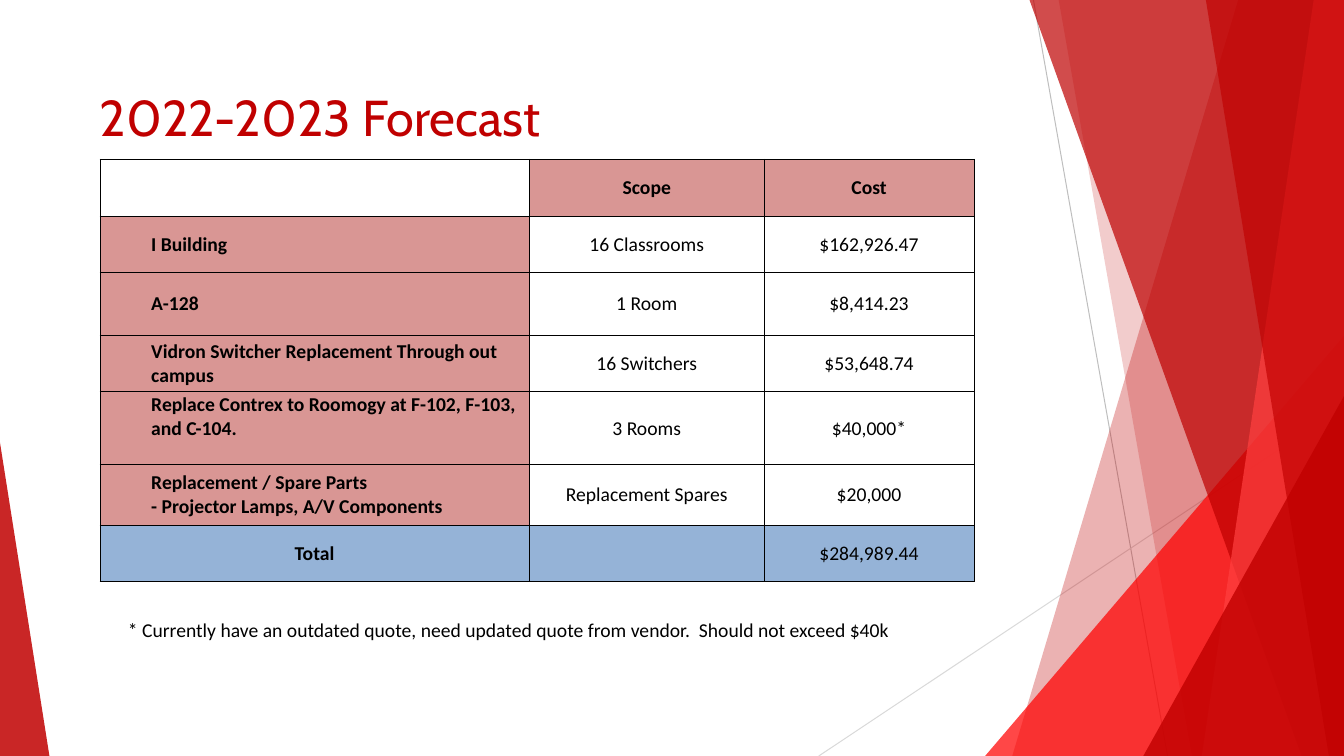
import pptx
import pptx.dml.color
import pptx.enum.shapes
import pptx.enum.text
import pptx.oxml
import pptx.oxml.ns
import pptx.util

RGB = pptx.dml.color.RGBColor
RED = RGB(0xC0, 0x00, 0x00)
DEEP_RED = RGB(0xBE, 0x00, 0x00)
BRIGHT_RED = RGB(0xFF, 0x00, 0x00)
LIGHT_RED = RGB(0xFF, 0x40, 0x40)
PINK = RGB(0xD9, 0x96, 0x94)
BLUE = RGB(0x95, 0xB3, 0xD7)
BLACK = RGB(0x00, 0x00, 0x00)
GRAY = RGB(0xBE, 0xBE, 0xBE)
LIGHT_GRAY = RGB(0xD9, 0xD9, 0xD9)

SLIDE_WIDTH = pptx.util.Inches(13.333)
SLIDE_HEIGHT = pptx.util.Inches(7.5)
CELL_MARGIN = pptx.util.Inches(0.01)
LABEL_INDENT = pptx.util.Inches(0.5)
MIDDLE = pptx.enum.text.MSO_ANCHOR.MIDDLE
TOP = pptx.enum.text.MSO_ANCHOR.TOP

FACET_LINES = [
    ((40.88, 0), (66.41, 100), GRAY),
    ((100, 53.73), (0, 100), LIGHT_GRAY),
]
FACETS = [
    (79.85, 0, 36.85, RED, 30),
    (45.68, 0, 71.02, RED, 20),
    (100, 44.4, 31.67, BRIGHT_RED, 72),
    (40.12, 0, 91.94, DEEP_RED, 70),
    (94.24, 0, 72.94, LIGHT_RED, 70),
    (73.7, 0, 97.12, RED, 65),
    (100, 52.4, 61.8, RED, 80),
]

COLUMN_WEIGHTS = [4.26, 2.33, 2.08]
ROW_WEIGHTS = [0.56, 0.56, 0.62, 0.56, 0.72, 0.6, 0.56]
FORECAST = [
    ([], "Scope", "Cost"),
    (["I Building"], "16 Classrooms", "$162,926.47"),
    (["A-128"], "1 Room", "$8,414.23"),
    (["Vidron Switcher Replacement Through out campus"], "16 Switchers", "$53,648.74"),
    (["Replace Contrex to Roomogy at F-102, F-103, and C-104."], "3 Rooms", "$40,000*"),
    (["Replacement / Spare Parts", "- Projector Lamps, A/V Components"],
     "Replacement Spares", "$20,000"),
    (["Total"], "", "$284,989.44"),
]
TOP_ALIGNED_ROW = 4


def slide_box(left, top, width, height):
    return (round(SLIDE_WIDTH * left / 100), round(SLIDE_HEIGHT * top / 100),
            round(SLIDE_WIDTH * width / 100), round(SLIDE_HEIGHT * height / 100))


def point_in(box, point):
    left, top, width, height = box
    return round(left + width * point[0] / 100), round(top + height * point[1] / 100)


def add_run(paragraph, text, size, font_name, color, bold=False):
    run = paragraph.add_run()
    run.text = text
    run.font.size = pptx.util.Pt(size)
    run.font.name = font_name
    run.font.bold = bold
    run.font.color.rgb = color


def add_polygon(slide, box, points, color, opacity):
    corners = [point_in(box, point) for point in points]
    builder = slide.shapes.build_freeform(*corners[0])
    builder.add_line_segments(corners[1:], close=True)
    shape = builder.convert_to_shape()
    shape.shadow.inherit = False
    shape.line.fill.background()
    shape.fill.solid()
    shape.fill.fore_color.rgb = color
    color_element = shape.fill._xPr.find(".//" + pptx.oxml.ns.qn("a:srgbClr"))
    alpha = pptx.oxml.parse_xml(
        f'<a:alpha {pptx.oxml.ns.nsdecls("a")} val="{opacity * 1000}"/>')
    color_element.append(alpha)


def add_facets(slide, box):
    for start, end, color in FACET_LINES:
        connector = slide.shapes.add_connector(
            pptx.enum.shapes.MSO_CONNECTOR.STRAIGHT,
            *point_in(box, start), *point_in(box, end))
        connector.line.color.rgb = color
        connector.line.width = pptx.util.Pt(0.72)
        connector._element.spPr.append(
            pptx.oxml.parse_xml(f'<a:effectLst {pptx.oxml.ns.nsdecls("a")}/>'))
    for top_x, top_y, bottom_x, color, opacity in FACETS:
        points = [(100, top_y), (top_x, top_y), (bottom_x, 100), (100, 100)]
        add_polygon(slide, box, points, color, opacity)


def add_wedge(slide, box):
    add_polygon(slide, box, [(0, 0), (0, 100), (100, 100)], RED, 85)


def add_text(slide, box, text, size, font_name, color, inset):
    frame = slide.shapes.add_textbox(*box).text_frame
    frame.word_wrap = True
    if not inset:
        frame.margin_left = frame.margin_right = 0
        frame.margin_top = frame.margin_bottom = 0
    add_run(frame.paragraphs[0], text, size, font_name, color)


def add_borders(cell):
    properties = cell._tc.get_or_add_tcPr()
    for side in ("lnL", "lnR", "lnT", "lnB"):
        properties.append(pptx.oxml.parse_xml(
            f'<a:{side} {pptx.oxml.ns.nsdecls("a")} w="6350"><a:solidFill>'
            f'<a:srgbClr val="{BLACK}"/></a:solidFill></a:{side}>'))


def fill_cell(cell, lines, color, bold, is_label, anchor):
    add_borders(cell)
    if color is None:
        cell.fill.background()
    else:
        cell.fill.solid()
        cell.fill.fore_color.rgb = color
    cell.margin_left = cell.margin_right = cell.margin_top = CELL_MARGIN
    cell.margin_bottom = 0
    cell.vertical_anchor = anchor
    frame = cell.text_frame
    for index, line in enumerate(lines):
        paragraph = frame.add_paragraph() if index else frame.paragraphs[0]
        if is_label:
            paragraph._p.get_or_add_pPr().set("marL", str(LABEL_INDENT))
        else:
            paragraph.alignment = pptx.enum.text.PP_ALIGN.CENTER
        add_run(paragraph, line, 14, "Calibri", BLACK, bold)


def add_forecast_table(slide, box):
    table = slide.shapes.add_table(len(ROW_WEIGHTS), len(COLUMN_WEIGHTS), *box).table
    table.first_row = False
    table.horz_banding = False
    for column, weight in zip(table.columns, COLUMN_WEIGHTS):
        column.width = round(box[2] * weight / sum(COLUMN_WEIGHTS))
    for row, weight in zip(table.rows, ROW_WEIGHTS):
        row.height = round(box[3] * weight / sum(ROW_WEIGHTS))
    last_row = len(FORECAST) - 1
    for row_index, (label, scope, cost) in enumerate(FORECAST):
        for column_index, lines in enumerate((label, [scope], [cost])):
            is_header = (row_index == 0) != (column_index == 0)
            is_total = row_index == last_row
            color = BLUE if is_total else PINK if is_header else None
            is_label = column_index == 0 and not is_total
            anchor = TOP if is_label and row_index == TOP_ALIGNED_ROW else MIDDLE
            fill_cell(table.cell(row_index, column_index), filter(None, lines),
                      color, is_header, is_label, anchor)


def build_forecast_slide(presentation):
    slide = presentation.slides.add_slide(presentation.slide_layouts[6])
    add_facets(slide, slide_box(60.92, 0, 39.08, 100))
    add_wedge(slide, slide_box(0, 58.53, 3.68, 41.47))
    add_text(slide, slide_box(7.43, 11.33, 85.15, 8.4),
             "2022-2023 Forecast", 36, "Cabin", RED, inset=False)
    add_forecast_table(slide, slide_box(7.43, 21.07, 65.04, 55.87))
    add_text(slide, slide_box(8.78, 81.07, 65.04, 4.53),
             "* Currently have an outdated quote, need updated quote from vendor.  "
             "Should not exceed $40k", 14, "Calibri", BLACK, inset=True)


def main():
    presentation = pptx.Presentation()
    presentation.slide_width = SLIDE_WIDTH
    presentation.slide_height = SLIDE_HEIGHT
    build_forecast_slide(presentation)
    presentation.save("out.pptx")


if __name__ == "__main__":
    main()
